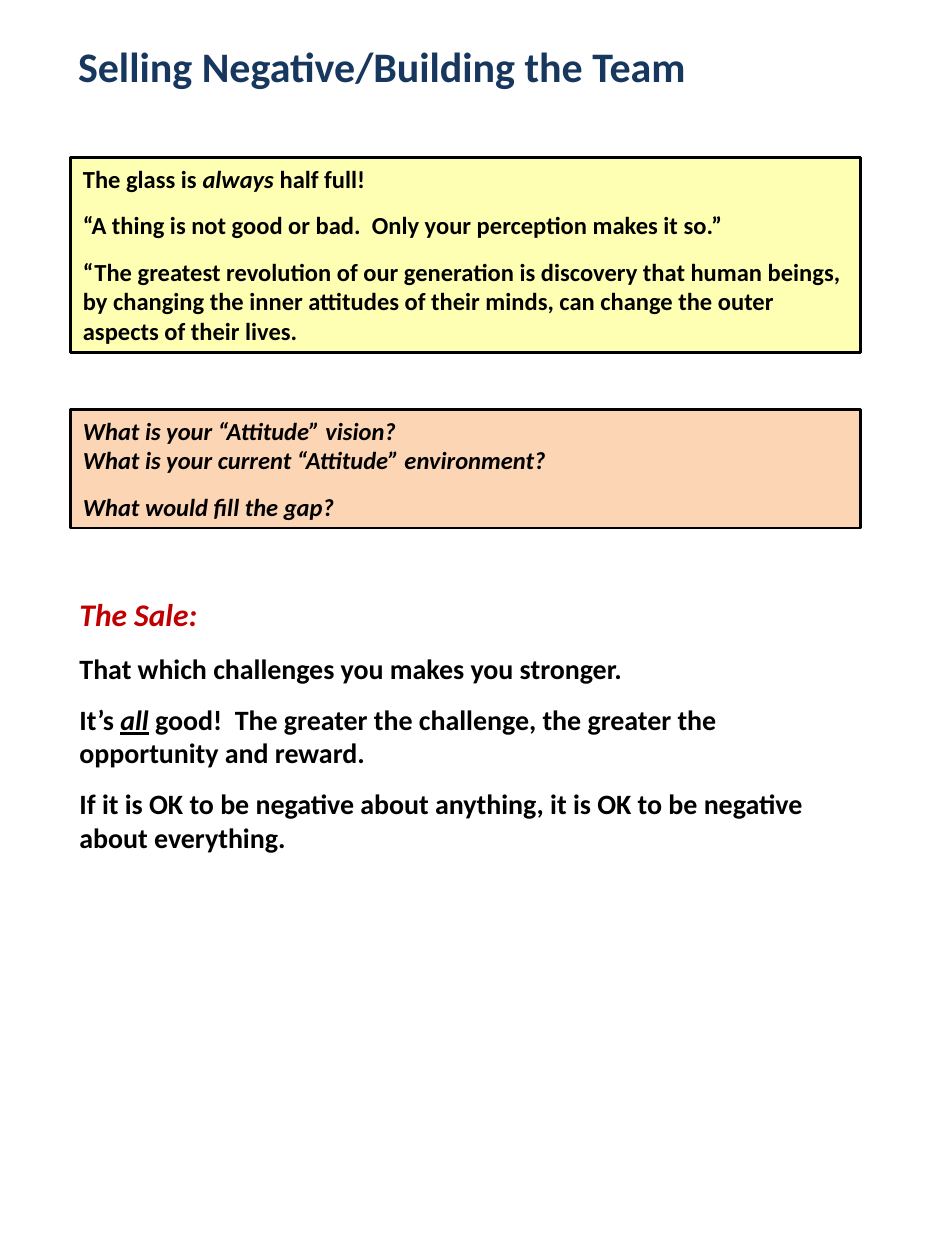
from lxml import etree
from pptx import Presentation
from pptx.dml.color import RGBColor
from pptx.enum.shapes import MSO_SHAPE
from pptx.enum.text import MSO_ANCHOR, MSO_AUTO_SIZE, PP_ALIGN
from pptx.oxml.ns import qn
from pptx.util import Pt

BLACK, NAVY, RED = "000000", "17375E", "C00000"
YELLOW, PEACH = "FFFFB3", "FCD5B5"
LEFT, WIDTH = 40.3, 451.4
GAP = 9.75


def rgb(color):
    return RGBColor.from_string(color)


def set_attrs(obj, values):
    for name, value in values.items():
        setattr(obj, name, value)


def place(sp, box):
    set_attrs(sp, dict(zip(("left", "top", "width", "height"), map(Pt, box))))


def write(tf, paragraphs):
    set_attrs(tf, {"word_wrap": True, "auto_size": MSO_AUTO_SIZE.NONE,
                   "vertical_anchor": MSO_ANCHOR.TOP,
                   "margin_left": Pt(7.2), "margin_right": Pt(7.2),
                   "margin_top": Pt(3.6), "margin_bottom": Pt(3.6)})
    for i, (runs, size, color, before) in enumerate(paragraphs):
        p = tf.paragraphs[0] if i == 0 else tf.add_paragraph()
        set_attrs(p, {"alignment": PP_ALIGN.LEFT, "line_spacing": 1.0,
                      "space_before": Pt(before), "space_after": Pt(0)})
        for text, style in runs:
            r = p.add_run()
            r.text = text
            set_attrs(r.font, {"name": "Calibri", "size": Pt(size),
                               "bold": True, "italic": False, **style})
            r.font.color.rgb = rgb(color)


def add_title(s, box):
    sp = s.shapes.title
    place(sp, box)
    write(sp.text_frame,
          [([("Selling Negative/Building the Team", {})], 24, NAVY, 0)])


def add_panel(s, box, fill, paragraphs):
    sp = s.shapes.add_shape(MSO_SHAPE.RECTANGLE, *map(Pt, box))
    sp.shadow.inherit = False
    sp.fill.solid()
    sp.fill.fore_color.rgb = rgb(fill)
    sp.line.color.rgb = rgb(BLACK)
    sp.line.width = Pt(1.5)
    write(sp.text_frame,
          [(runs, 14, BLACK, before) for runs, before in paragraphs])


def add_sale(s, box):
    sp = s.placeholders[1]
    place(sp, box)
    write(sp.text_frame, [
        ([("The Sale:", {"italic": True})], 18, RED, 0),
        ([("That which challenges you makes you stronger.", {})],
         16, BLACK, 11),
        ([("It’s ", {}), ("all", {"italic": True, "underline": True}),
          (" ", {"italic": True}),
          ("good!  The greater the challenge, the greater the "
           "opportunity and reward.", {})], 16, BLACK, GAP),
        ([("If it is OK to be negative about anything, it is OK to be "
           "negative about everything.", {})], 16, BLACK, GAP),
    ])
    for p in sp.text_frame.paragraphs:
        pPr = p._p.get_or_add_pPr()
        pPr.set("marL", "0")
        pPr.set("indent", "0")
        etree.SubElement(pPr, qn("a:buNone"))


def main():
    prs = Presentation()
    set_attrs(prs, {"slide_width": Pt(540), "slide_height": Pt(720)})
    s = prs.slides.add_slide(prs.slide_layouts[1])
    italic = {"italic": True}
    add_title(s, (37.4, 19.4, 382.3, 36))
    add_panel(s, (LEFT, 90, WIDTH, 111.6), YELLOW, [
        ([("The glass is ", {}), ("always", italic), (" half full!", {})], 0),
        ([("“A thing is not good or bad.  Only your perception makes "
           "it so.”", {})], GAP),
        ([("“The greatest revolution of our generation is discovery that "
           "human beings, by changing the inner attitudes of their minds, "
           "can change the outer aspects of their lives.", {})], GAP),
    ])
    add_panel(s, (LEFT, 234, WIDTH, 67.7), PEACH, [
        ([("What is your “Attitude” vision?", italic)], 0),
        ([("What is your current “Attitude” environment?", italic)], 0),
        ([("What would fill the gap?", italic)], GAP),
    ])
    add_sale(s, (38.2, 336.2, 454.3, 175.7))
    prs.save("out.pptx")


if __name__ == "__main__":
    main()
